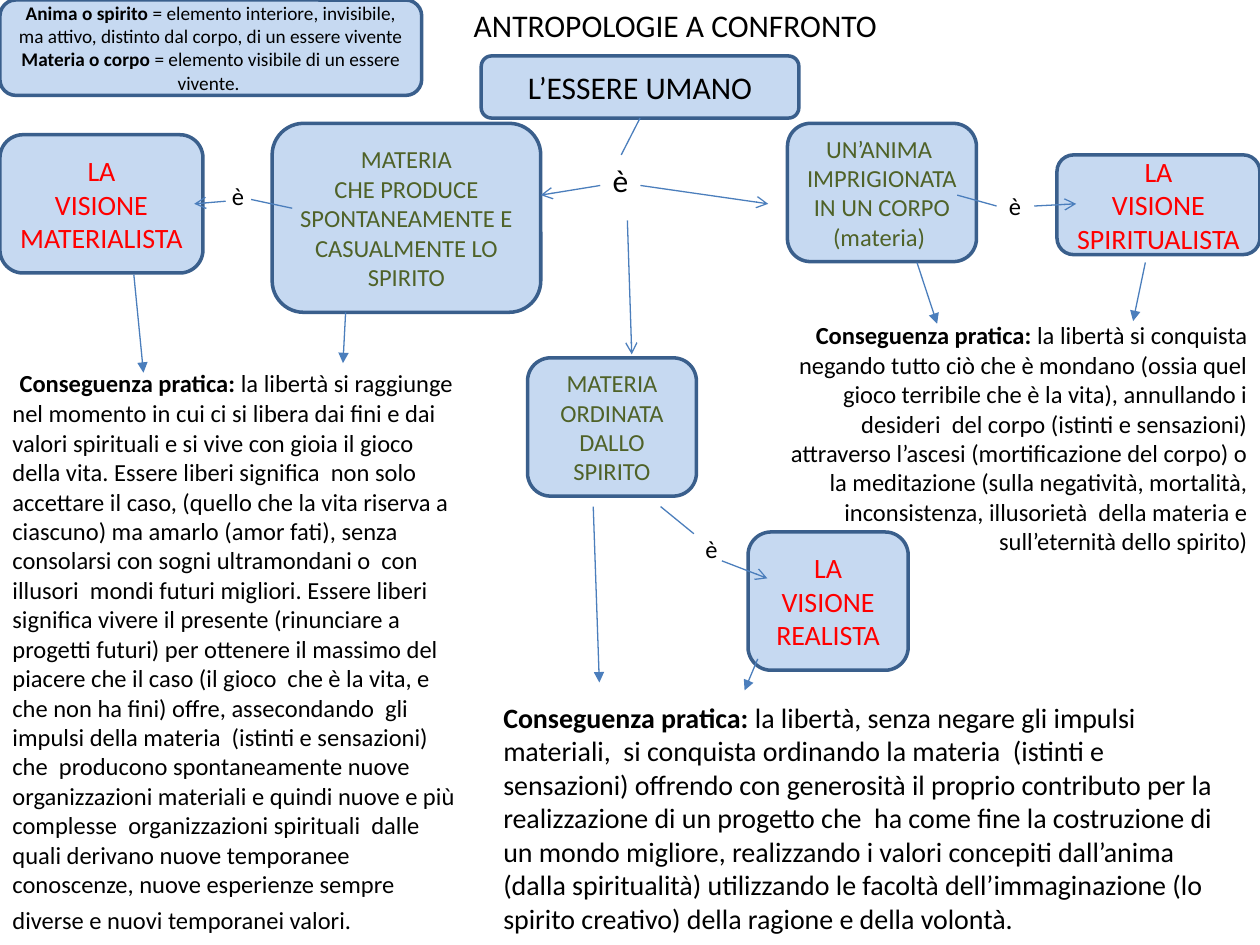
from lxml import etree
from pptx import Presentation
from pptx import util as u
from pptx.dml.color import RGBColor
from pptx.enum import shapes, text
from pptx.oxml.ns import qn

COLORS = {"fill": "C6D9F1", "border": "3A5F8C", "arrow": "4B7EBC",
          "black": "000000", "green": "4F6228", "red": "FF0000"}
LEFT, CENTER, RIGHT = text.PP_ALIGN.LEFT, text.PP_ALIGN.CENTER, text.PP_ALIGN.RIGHT
TOP, LEFT_SIDE, BOTTOM, RIGHT_SIDE = range(4)


class ConceptMap:
    """Holds the style and the current slide."""

    font = "Calibri"

    def __init__(self, slide):
        self.slide = slide

    def color(self, name):
        return RGBColor.from_string(COLORS[name])

    def add_runs(self, shape, paragraphs, size, color="black", align=LEFT):
        """Each paragraph is a list of (words, bold[, size]) runs or a plain string."""
        frame = shape.text_frame
        for index, runs in enumerate(paragraphs):
            paragraph = frame.add_paragraph() if index else frame.paragraphs[0]
            paragraph.alignment = align
            for words, bold, *own_size in [(runs, False)] if isinstance(runs, str) else runs:
                run = paragraph.add_run()
                run.text = words
                run.font.name = self.font
                run.font.size = u.Pt(own_size[0] if own_size else size)
                run.font.bold = bold
                run.font.color.rgb = self.color(color)

    def title(self, words, left, top, width, height, size=18):
        shape = self.slide.shapes.title
        shape.left, shape.top = u.Pt(left), u.Pt(top)
        shape.width, shape.height = u.Pt(width), u.Pt(height)
        frame = shape.text_frame
        frame.word_wrap = False
        frame.auto_size = text.MSO_AUTO_SIZE.SHAPE_TO_FIT_TEXT
        frame.vertical_anchor = text.MSO_ANCHOR.TOP
        self.add_runs(shape, [words], size)

    def box(self, paragraphs, left, top, width, height, size, color="black"):
        shape = self.slide.shapes.add_shape(
            shapes.MSO_SHAPE.ROUNDED_RECTANGLE,
            u.Pt(left), u.Pt(top), u.Pt(width), u.Pt(height))
        shape.shadow.inherit = False
        shape.fill.solid()
        shape.fill.fore_color.rgb = self.color("fill")
        shape.line.color.rgb = self.color("border")
        shape.line.width = u.Pt(2)
        shape.text_frame.vertical_anchor = text.MSO_ANCHOR.MIDDLE
        self.add_runs(shape, paragraphs, size, color, CENTER)
        return shape

    def text(self, paragraphs, left, top, width, height, size, align=LEFT, wrap=True):
        shape = self.slide.shapes.add_textbox(
            u.Pt(left), u.Pt(top), u.Pt(width), u.Pt(height))
        shape.text_frame.word_wrap = wrap
        shape.text_frame.auto_size = text.MSO_AUTO_SIZE.SHAPE_TO_FIT_TEXT
        self.add_runs(shape, paragraphs, size, align=align)
        return shape

    def verb(self, left, top, width=21.5, height=24.5, size=14):
        return self.text(["è"], left, top, width, height, size, wrap=False)

    def line(self, x1, y1, x2, y2, head=None, begin=None, end=None):
        connector = self.slide.shapes.add_connector(
            shapes.MSO_CONNECTOR.STRAIGHT, u.Pt(x1), u.Pt(y1), u.Pt(x2), u.Pt(y2))
        if begin:
            connector.begin_connect(*begin)
        if end:
            connector.end_connect(*end)
        connector.line.color.rgb = self.color("arrow")
        connector.line.width = u.Pt(0.75)
        properties = connector._element.spPr
        if head:
            etree.SubElement(properties.find(qn("a:ln")), qn("a:tailEnd"), type=head)
        etree.SubElement(properties, qn("a:effectLst"))


presentation = Presentation()
presentation.slide_width, presentation.slide_height = u.Pt(720), u.Pt(540)
concept_map = ConceptMap(presentation.slides.add_slide(presentation.slide_layouts[5]))

# Title, subject and definitions
concept_map.title("ANTROPOLOGIE A CONFRONTO", 263.5, 0, 247, 29)
human = concept_map.box(["L’ESSERE UMANO"], 275, 32, 181.5, 35.5, 18)
concept_map.box([
    [("Anima o spirito ", True),
     ("= elemento interiore, invisibile, ma attivo, distinto dal corpo, "
      "di un essere vivente", False)],
    [("Materia o corpo ", True), ("= elemento visibile di un essere vivente. ", False)],
], 0, 0, 241, 54.5, 11)

# What the human being is
for paragraphs, *place in [
    (["UN’ANIMA ", "IMPRIGIONATA ", "IN UN CORPO (materia) "], 450, 70.5, 108, 79),
    (["MATERIA ORDINATA DALLO SPIRITO"], 301.5, 204.5, 96.5, 79),
    (["MATERIA", "CHE PRODUCE SPONTANEAMENTE E CASUALMENTE LO SPIRITO"],
     155.5, 70.5, 153.5, 108),
]:
    concept_map.box(paragraphs, *place, 14, "green")

# The three visions
for name, *place in [
    ("SPIRITUALISTA", 604, 88.5, 116, 57),
    ("REALISTA", 427.5, 304, 91.5, 79),
    ("MATERIALISTA", 0, 77, 116, 79),
]:
    concept_map.box(["LA", "VISIONE", name], *place, 16, "red")

# Linking verbs
main_verb = concept_map.verb(343, 88.5, 24, 29, 18)
spiritual_verb = concept_map.verb(569.5, 105.5)
concept_map.verb(396, 301.5)
concept_map.verb(125.5, 100)

# Practical consequences
CONSEQUENCE = ("Conseguenza pratica: ", True)
concept_map.text([[
    (" ", False, 18), CONSEQUENCE,
    ("la libertà si raggiunge nel momento in cui ci si libera dai fini e dai valori "
     "spirituali e si vive con gioia il gioco della vita. Essere liberi significa  non "
     "solo accettare il caso, (quello che la vita riserva a ciascuno) ma amarlo (amor "
     "fati), senza  consolarsi con sogni ultramondani o  con  illusori  mondi futuri "
     "migliori. Essere liberi significa vivere il presente (rinunciare a progetti futuri) "
     "per ottenere il massimo del piacere che il caso (il gioco  che è la vita, e che non "
     "ha fini) offre, assecondando  gli impulsi della materia  (istinti e sensazioni) che  "
     "producono spontaneamente nuove organizzazioni materiali e quindi nuove e più "
     "complesse  organizzazioni spirituali  dalle quali derivano nuove temporanee "
     "conoscenze, nuove esperienze sempre diverse e nuovi temporanei valori.", False),
    (" ", False, 18),
]], 0, 202.5, 269.5, 339, 14)
concept_map.text([[
    CONSEQUENCE,
    ("la libertà, senza negare gli impulsi materiali,  si conquista ordinando la materia  "
     "(istinti e sensazioni) offrendo con generosità il proprio contributo per la "
     "realizzazione di un progetto che  ha come fine la costruzione di un mondo migliore, "
     "realizzando i valori concepiti dall’anima (dalla spiritualità) utilizzando le "
     "facoltà dell’immaginazione (lo spirito creativo) della ragione e della volontà.",
     False),
]], 280.5, 396.5, 425.5, 143.5, 16)
concept_map.text([[
    CONSEQUENCE,
    ("la libertà si conquista negando tutto ciò che è mondano (ossia quel gioco terribile "
     "che è la vita), annullando i desideri  del corpo (istinti e sensazioni) attraverso "
     "l’ascesi (mortificazione del corpo) o la meditazione (sulla negatività, mortalità, "
     "inconsistenza, illusorietà  della materia e sull’eternità dello spirito)", False),
]], 433, 179.5, 287, 143.5, 14, RIGHT)

# Lines into the verbs
concept_map.line(366, 67.5, 355, 88.5, begin=(human, BOTTOM), end=(main_verb, TOP))
concept_map.line(547, 111.5, 569.5, 117.5, end=(spiritual_verb, LEFT_SIDE))
concept_map.line(167, 119, 143.5, 114)
concept_map.line(396.5, 305, 377.5, 289.5)

# Open arrows out of the verbs
concept_map.line(591, 117.5, 615, 116.5, "arrow", begin=(spiritual_verb, RIGHT_SIDE))
for ends in [
    (343, 106, 309, 111.5), (366, 106, 439, 116.5), (358.5, 126, 361, 202.5),
    (129, 115, 111, 116.5), (412.5, 320.5, 438.5, 330.5),
]:
    concept_map.line(*ends, "arrow")

# Solid arrows to the consequences
for ends in [
    (76.5, 157, 82, 213), (197.5, 178.5, 196, 207.5), (339, 289.5, 342.5, 390),
    (433, 376.5, 425.5, 394.5), (524, 150, 535.5, 185), (654.5, 150, 647.5, 183.5),
]:
    concept_map.line(*ends, "triangle")

presentation.save("out.pptx")
